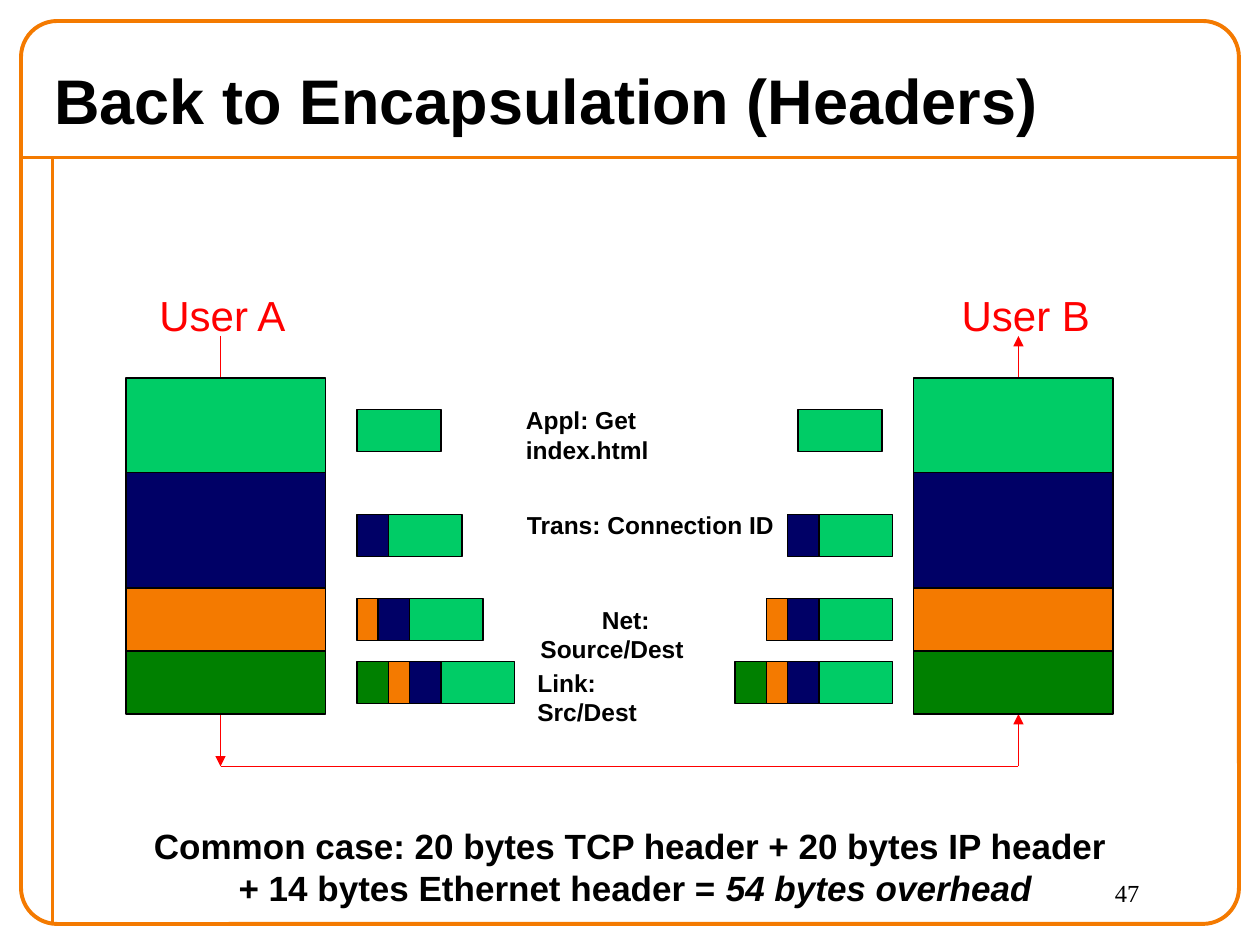
from lxml.etree import SubElement
from pptx import Presentation
from pptx.dml.color import RGBColor
from pptx.enum.shapes import MSO_CONNECTOR, MSO_SHAPE
from pptx.enum.text import MSO_ANCHOR, PP_ALIGN
from pptx.oxml.ns import qn
from pptx.util import Pt

PX = 7620  # EMU in one px, 120 px to the inch
BLACK = RGBColor(0x00, 0x00, 0x00)
RED = RGBColor(0xFF, 0x00, 0x00)
ORANGE = RGBColor(0xF4, 0x7A, 0x00)
MINT = RGBColor(0x00, 0xCC, 0x66)
NAVY = RGBColor(0x00, 0x00, 0x66)
GREEN = RGBColor(0x00, 0x80, 0x00)

LABEL = {"size": Pt(14), "bold": True}
USER = {"size": Pt(24), "color": RED}

# colour and height of each layer, top down
LAYERS = [(MINT, 90), (NAVY, 110), (ORANGE, 60), (GREEN, 60)]

# top, left packet x, right packet x, parts from back to front (dx, width, colour)
PACKETS = [
    (390, 340, 760, [(0, 80, MINT)]),
    (490, 340, 750, [(20, 80, MINT), (0, 30, NAVY)]),
    (570, 340, 730, [(40, 80, MINT), (10, 40, NAVY), (0, 20, ORANGE)]),
    (630, 340, 700, [(70, 80, MINT), (40, 40, NAVY), (10, 40, ORANGE), (0, 30, GREEN)]),
]

# text, box, alignment, first-line indent
NOTES = [
    ("Appl: Get index.html", (489, 380, 240, 40), PP_ALIGN.LEFT, 0),
    ("Trans: Connection ID", (490, 480, 270, 40), PP_ALIGN.LEFT, 0),
    ("Net: Source/Dest", (468, 570, 230, 40), PP_ALIGN.CENTER, 26),
    ("Link: Src/Dest", (500, 630, 170, 40), PP_ALIGN.LEFT, 0),
]


def scale(*nums):
    return [n * PX for n in nums]


def style(font, form):
    """Set font attributes from a dict; black Arial unless it says otherwise."""
    form = {"name": "Arial", "color": BLACK, **form}
    font.color.rgb = form.pop("color")
    for key, value in form.items():
        setattr(font, key, value)


def add_text(slide, box, words, form, align=PP_ALIGN.LEFT, anchor=MSO_ANCHOR.TOP):
    """Add a text box and return its paragraph."""
    frame = slide.shapes.add_textbox(*scale(*box)).text_frame
    frame.word_wrap = True
    frame.vertical_anchor = anchor
    para = frame.paragraphs[0]
    para.alignment = align
    add_run(para, words, form)
    return para


def add_run(para, words, form):
    run = para.add_run()
    run.text = words
    style(run.font, form)


def add_block(slide, box, fill):
    shape = slide.shapes.add_shape(MSO_SHAPE.RECTANGLE, *scale(*box))
    shape.shadow.inherit = False
    shape.fill.solid()
    shape.fill.fore_color.rgb = fill
    shape.line.color.rgb = BLACK
    shape.line.width = Pt(0.75)


def add_line(slide, ends, color, width, arrow=False):
    line = slide.shapes.add_connector(MSO_CONNECTOR.STRAIGHT, *scale(*ends))
    line.line.color.rgb = color
    line.line.width = Pt(width)
    props = line._element.spPr
    if arrow:
        SubElement(props.find(qn("a:ln")), qn("a:tailEnd"), type="triangle")
    SubElement(props, qn("a:effectLst"))


def add_frame(slide, left, top, width, height):
    right, base, rule = left + width, top + height, top + 130
    add_line(slide, (left, rule, right, rule), ORANGE, 2.25)
    add_line(slide, (left + 30, rule, left + 30, base), ORANGE, 2.25)
    edge = slide.shapes.add_shape(
        MSO_SHAPE.ROUNDED_RECTANGLE, *scale(left, top, width, height))
    edge.adjustments[0] = 0.04
    edge.shadow.inherit = False
    edge.fill.background()
    edge.line.color.rgb = ORANGE
    edge.line.width = Pt(2.25)


def add_route(slide, left, top, width, height):
    """Draw the path down one stack, across, and up the other."""
    right, base = left + width, top + height
    low, foot = base - 80, base - 50
    add_line(slide, (left, top, left, low), RED, 0.75, True)
    add_line(slide, (right, low, right, top), RED, 0.75, True)
    add_line(slide, (left, base, right, base), RED, 0.75)
    add_line(slide, (left, foot, left, base), RED, 0.75, True)
    add_line(slide, (right, base, right, foot), RED, 0.75, True)


def add_stack(slide, left, top, width):
    for fill, height in LAYERS:
        add_block(slide, (left, top, width, height), fill)
        top += height


def add_packet(slide, left, top, height, parts):
    for shift, width, fill in parts:
        add_block(slide, (left + shift, top, width, height), fill)


def add_notes(slide):
    for words, box, align, indent in NOTES:
        para = add_text(slide, box, words, LABEL, align)
        if indent:
            para._p.get_or_add_pPr().set("indent", str(indent * PX))


def add_sum(slide, box):
    form = {"size": Pt(20), "bold": True}
    para = add_text(slide, box, "Common case: 20 bytes TCP header + 20 bytes IP header ",
                    form, PP_ALIGN.CENTER, MSO_ANCHOR.MIDDLE)
    para.add_line_break()
    add_run(para, "+ 14 bytes Ethernet header = ", form)
    add_run(para, "54 bytes overhead", {**form, "italic": True})


def main():
    deck = Presentation()
    deck.slide_width, deck.slide_height = scale(1200, 900)
    slide = deck.slides.add_slide(deck.slide_layouts[6])
    add_frame(slide, 20, 20, 1160, 860)
    add_text(slide, (1050, 830, 120, 50), "47",
             {"name": "Times New Roman", "size": Pt(14)})
    add_text(slide, (40, 50, 1160, 90), "Back to Encapsulation (Headers)",
             {"size": Pt(36), "bold": True}, anchor=MSO_ANCHOR.MIDDLE)
    add_route(slide, 210, 320, 760, 410)
    for left in (120, 870):
        add_stack(slide, left, 360, 190)
    for top, near, far, parts in PACKETS:
        for left in (near, far):
            add_packet(slide, left, top, 40, parts)
    add_notes(slide)
    for left, name in ((140, "User A"), (904, "User B")):
        add_text(slide, (left, 270, 146, 60), name, USER)
    add_sum(slide, (53, 779, 1104, 92))
    deck.save("out.pptx")


if __name__ == "__main__":
    main()
